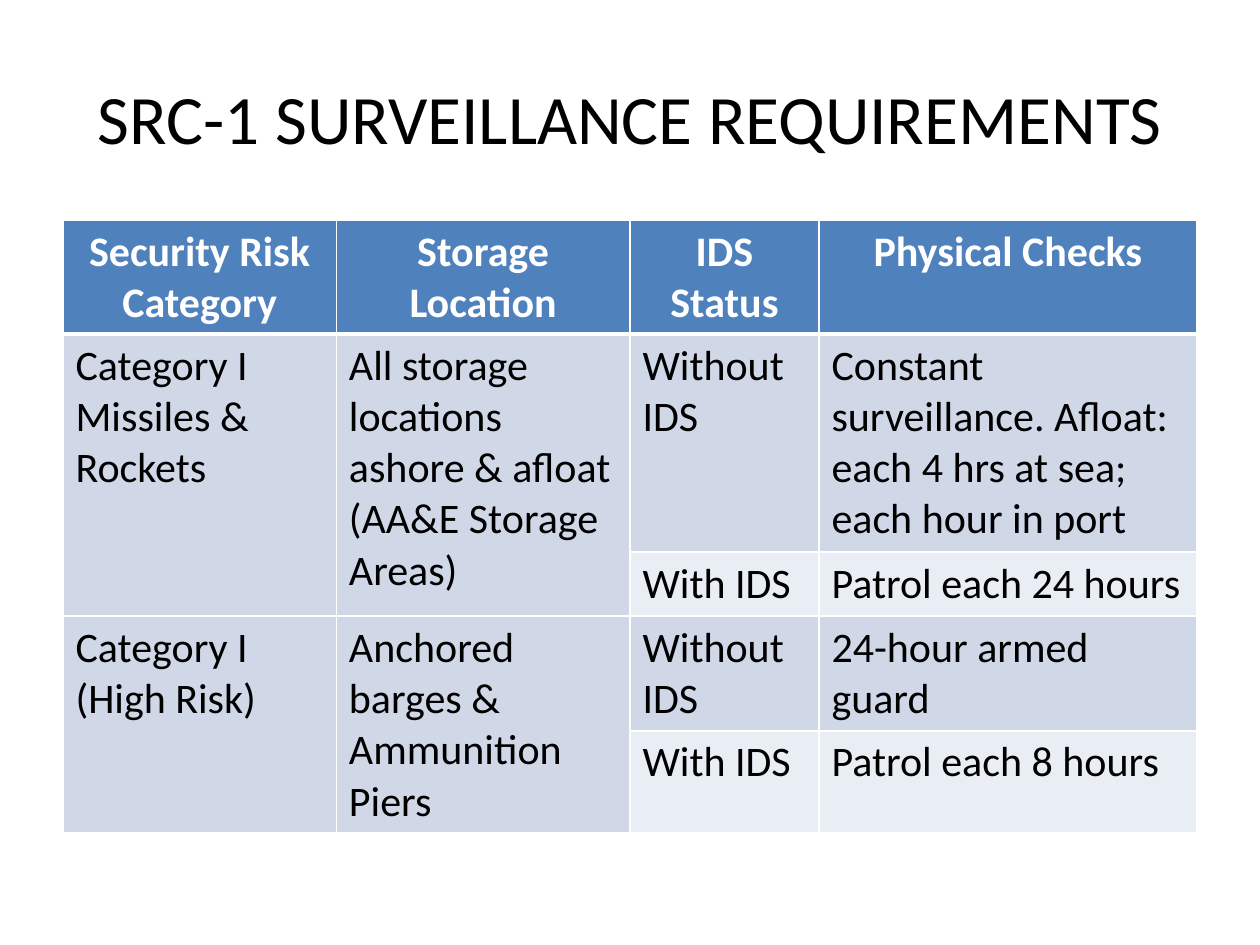
from lxml.etree import SubElement
from pptx import Presentation
from pptx.dml.color import RGBColor
from pptx.enum.text import MSO_ANCHOR as Anchor, PP_ALIGN as Align
from pptx.oxml.ns import qn
from pptx.util import Inches, Pt

BLACK = RGBColor(0x00, 0x00, 0x00)
WHITE = RGBColor(0xFF, 0xFF, 0xFF)
HEADER_BLUE = RGBColor(0x4F, 0x81, 0xBD)
BAND_DARK = RGBColor(0xD0, 0xD8, 0xE8)
BAND_LIGHT = RGBColor(0xE9, 0xED, 0xF4)

FONT = "Calibri"
COLUMN_WIDTHS = [2.17, 2.33, 1.5, 3]
ROW_HEIGHTS = [0.9, 1.73, 0.51, 0.91, 0.81]
REQUIREMENTS = [
    ["Security Risk Category", "Storage Location", "IDS Status", "Physical Checks"],
    ["Category I Missiles & Rockets",
     "All storage locations ashore & afloat\n(AA&E Storage Areas)",
     "Without IDS",
     "Constant surveillance. Afloat: each 4 hrs at sea; each hour in port"],
    [None, None, "With IDS", "Patrol each 24 hours"],
    ["Category I (High Risk)", "Anchored barges & Ammunition Piers",
     "Without IDS", "24-hour armed guard"],
    [None, None, "With IDS", "Patrol each 8 hours"],
]


def write_text(frame, text, size, color, bold=False, align=Align.LEFT):
    """Write each line of text as one paragraph with one run."""
    for number, line in enumerate(text.split("\n")):
        paragraph = frame.add_paragraph() if number else frame.paragraphs[0]
        paragraph.alignment = align
        run = paragraph.add_run()
        run.text = line
        run.font.name = FONT
        run.font.size = Pt(size)
        run.font.bold = bold
        run.font.color.rgb = color


def set_borders(cell, top, bottom):
    """Give a cell white borders, with the top and bottom widths in points."""
    properties = cell._tc.get_or_add_tcPr()
    sides = [("a:lnL", 1), ("a:lnR", 1), ("a:lnT", top), ("a:lnB", bottom)]
    for position, (side, width) in enumerate(sides):
        border = SubElement(properties, qn(side), w=str(Pt(width)))
        fill = SubElement(border, qn("a:solidFill"))
        SubElement(fill, qn("a:srgbClr"), val=str(WHITE))
        properties.insert(position, border)


def add_title(slide, text):
    """Add the centred slide title."""
    title = slide.shapes.add_textbox(Inches(0.5), Inches(0.3), Inches(9), Inches(1.25))
    frame = title.text_frame
    frame.word_wrap = True
    frame.vertical_anchor = Anchor.MIDDLE
    write_text(frame, text, 39.6, BLACK, align=Align.CENTER)


def fill_cell(cell, text, row):
    """Style one table cell by its row and write its text."""
    is_header = row == 0
    cell.fill.solid()
    if is_header:
        cell.fill.fore_color.rgb = HEADER_BLUE
    else:
        cell.fill.fore_color.rgb = BAND_DARK if row % 2 else BAND_LIGHT
    set_borders(cell, top=3 if row == 1 else 1, bottom=3 if is_header else 1)
    if text:
        write_text(cell.text_frame, text, 24, WHITE if is_header else BLACK,
                   is_header, Align.CENTER if is_header else Align.LEFT)


def add_requirements_table(slide):
    """Add the surveillance table, merging each category over its two rows."""
    table = slide.shapes.add_table(
        len(ROW_HEIGHTS), len(COLUMN_WIDTHS), Inches(0.5), Inches(1.75),
        Inches(sum(COLUMN_WIDTHS)), Inches(sum(ROW_HEIGHTS))).table
    for column, width in zip(table.columns, COLUMN_WIDTHS):
        column.width = Inches(width)
    for row, height in zip(table.rows, ROW_HEIGHTS):
        row.height = Inches(height)
    for row, texts in enumerate(REQUIREMENTS):
        for column, text in enumerate(texts):
            cell = table.cell(row, column)
            fill_cell(cell, text, row)
            if text is None:
                table.cell(row - 1, column).merge(cell)


def main():
    """Build and save the slide."""
    deck = Presentation()
    deck.slide_width, deck.slide_height = Inches(10), Inches(7.5)
    slide = deck.slides.add_slide(deck.slide_layouts[6])
    add_title(slide, "SRC-1 SURVEILLANCE REQUIREMENTS")
    add_requirements_table(slide)
    deck.save("out.pptx")


if __name__ == "__main__":
    main()
